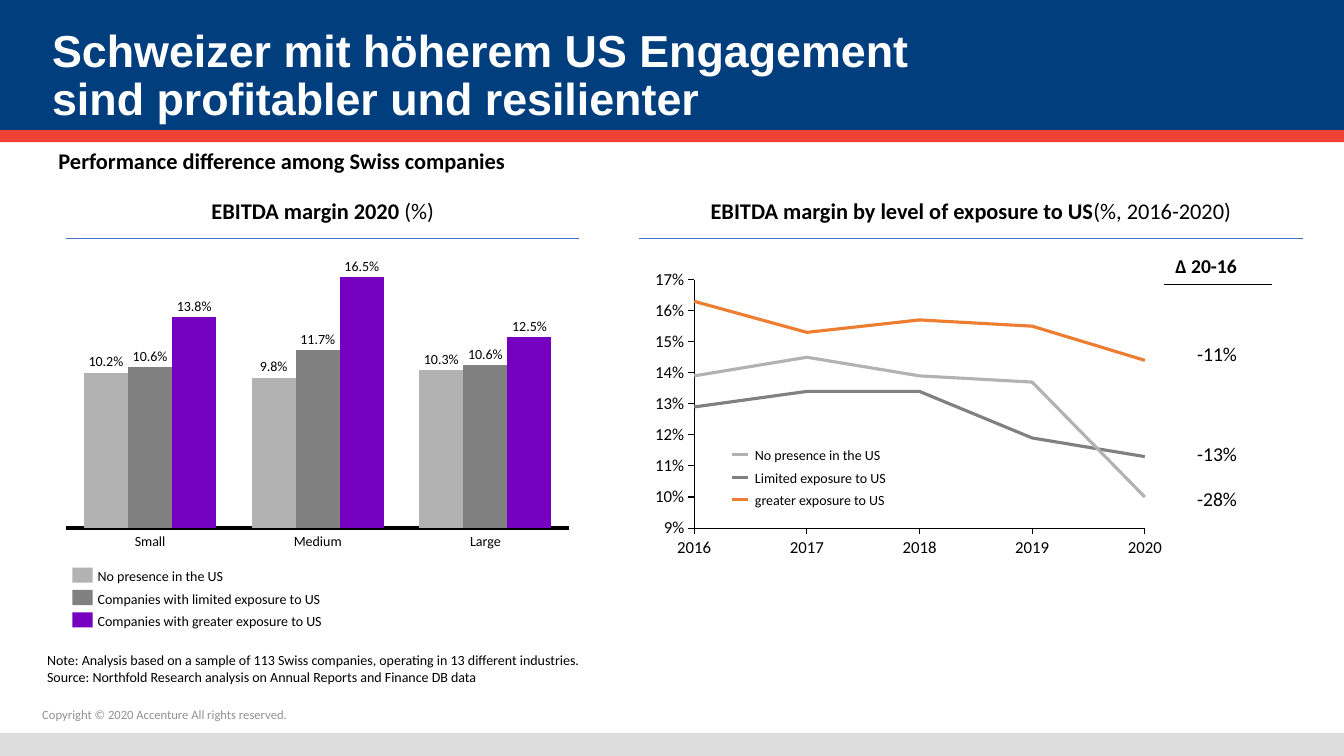
from dataclasses import dataclass

from lxml import etree
from pptx import Presentation
from pptx.chart.chart import Chart
from pptx.chart.data import CategoryChartData, XyChartData
from pptx.dml.color import RGBColor
from pptx.enum.chart import XL_CHART_TYPE, XL_TICK_LABEL_POSITION, XL_TICK_MARK
from pptx.enum.shapes import MSO_CONNECTOR, MSO_SHAPE
from pptx.enum.text import MSO_ANCHOR, MSO_AUTO_SIZE, PP_ALIGN
from pptx.oxml.ns import qn
from pptx.slide import Slide
from pptx.text.text import Font
from pptx.util import Pt

COLUMNS, LINES = XL_CHART_TYPE.COLUMN_CLUSTERED, XL_CHART_TYPE.XY_SCATTER_LINES_NO_MARKERS
TICK_NONE, TICK_OUT = XL_TICK_MARK.NONE, XL_TICK_MARK.OUTSIDE
NO_LABELS = XL_TICK_LABEL_POSITION.NONE
RECT, STRAIGHT = MSO_SHAPE.RECTANGLE, MSO_CONNECTOR.STRAIGHT
TOP, MIDDLE, BOTTOM = MSO_ANCHOR.TOP, MSO_ANCHOR.MIDDLE, MSO_ANCHOR.BOTTOM
LEFT, CENTER = PP_ALIGN.LEFT, PP_ALIGN.CENTER


@dataclass(frozen=True)
class Theme:
    title_font: str = "Arial"
    body_font: str = "Calibri"
    white: str = "FFFFFF"
    black: str = "000000"
    navy: str = "003E7E"
    red: str = "EF4135"
    footer: str = "DDDDDD"
    copyright: str = "919191"
    rule: str = "4472C4"
    none: str = "B2B2B2"
    limited: str = "808080"
    greater_bar: str = "7500C0"
    greater_line: str = "ED7D31"
    title_size: float = 32
    heading_size: float = 16
    delta_size: float = 14
    axis_size: float = 12
    label_size: float = 10
    copyright_size: float = 9


THEME = Theme()


@dataclass(frozen=True)
class Box:
    left: float
    top: float
    width: float
    height: float

    def emu(self) -> tuple[Pt, Pt, Pt, Pt]:
        return Pt(self.left), Pt(self.top), Pt(self.width), Pt(self.height)

    def inner(self, x: float, y: float, w: float, h: float) -> "Box":
        """Area given as fractions of this box."""
        return Box(self.left + x * self.width, self.top + y * self.height,
                   w * self.width, h * self.height)


@dataclass(frozen=True)
class Run:
    text: str
    bold: bool = False


@dataclass(frozen=True)
class Exposure:
    """One company group in either chart."""
    name: str
    color: str
    values: tuple[float, ...]
    labels: tuple[str, ...] = ()


@dataclass(frozen=True)
class Heading:
    box: Box
    measure: str
    unit: str


@dataclass(frozen=True)
class Delta:
    change: str
    top: float


BANDS = [(Box(0, 523.5, 960, 16.5), THEME.footer), (Box(0, 0, 960, 93.5), THEME.navy),
         (Box(0, 93, 960, 8.6), THEME.red)]
HEADINGS = [Heading(Box(47.5, 133.9, 366, 36.4), "EBITDA margin 2020 ", "(%)"),
            Heading(Box(456.5, 133.9, 474, 36.4),
                    "EBITDA margin by level of exposure to US", "(%, 2016-2020)")]
SIZES = ("Small", "Medium", "Large")
YEARS = range(2016, 2021)
BARS = [
    Exposure("No presence in the US", THEME.none, (62, 60, 63), ("10.2%", "9.8%", "10.3%")),
    Exposure("Companies with limited exposure to US", THEME.limited, (64, 71, 65),
             ("10.6%", "11.7%", "10.6%")),
    Exposure("Companies with greater exposure to US", THEME.greater_bar, (84, 100, 76),
             ("13.8%", "16.5%", "12.5%"))]
TRENDS = [
    Exposure("No presence in the US", THEME.none, (13.9, 14.5, 13.9, 13.7, 10)),
    Exposure("Limited exposure to US", THEME.limited, (12.9, 13.4, 13.4, 11.9, 11.3)),
    Exposure("greater exposure to US", THEME.greater_line, (16.3, 15.3, 15.7, 15.5, 14.4))]
DELTAS = [Delta("-11%", 244), Delta("-13%", 315.4), Delta("-28%", 347.8)]
BAR_BOX, BAR_PLOT = Box(41, 191.5, 372.3, 192.3), (0.017, 0.034, 0.965, 0.932)
TREND_BOX, TREND_PLOT = Box(455.8, 190.8, 388.8, 212.4), (0.103, 0.042, 0.828, 0.836)
GAP = 80
LEGEND_PITCH = 16


def assign(target: object, values: dict[str, object]) -> None:
    for name, value in values.items():
        setattr(target, name, value)


def style_font(font: Font, size: float, color: str = THEME.black, bold: bool = False,
               face: str = THEME.body_font) -> None:
    assign(font, {"name": face, "size": Pt(size), "bold": bold})
    font.color.rgb = RGBColor.from_string(color)


def add_text(slide: Slide, box: Box, lines: list[list[Run]], size: float = THEME.label_size,
             color: str = THEME.black, align: PP_ALIGN = LEFT, anchor: MSO_ANCHOR = TOP,
             wrap: bool = True, insets: tuple[float, ...] = (0, 0, 0, 0)) -> None:
    """Each line is a paragraph; insets run left, top, right, bottom."""
    frame = slide.shapes.add_textbox(*box.emu()).text_frame
    left, top, right, bottom = map(Pt, insets)
    assign(frame, {"word_wrap": wrap, "vertical_anchor": anchor, "margin_left": left,
                   "margin_top": top, "margin_right": right, "margin_bottom": bottom})
    for index, line in enumerate(lines):
        paragraph = frame.add_paragraph() if index else frame.paragraphs[0]
        paragraph.alignment = align
        for part in line:
            run = paragraph.add_run()
            run.text = part.text
            style_font(run.font, size, color, part.bold)


def add_block(slide: Slide, box: Box, color: str) -> None:
    block = slide.shapes.add_shape(RECT, *box.emu())
    block.shadow.inherit = False
    block.fill.solid()
    block.fill.fore_color.rgb = RGBColor.from_string(color)
    block.line.fill.background()


def add_rule(slide: Slide, left: float, right: float, y: float, color: str,
             width: float = 0.5) -> None:
    rule = slide.shapes.add_connector(STRAIGHT, Pt(left), Pt(y), Pt(right), Pt(y))
    rule.line.color.rgb = RGBColor.from_string(color)
    rule.line.width = Pt(width)
    etree.SubElement(rule.element.spPr, qn("a:effectLst"))


def prepare_chart(chart: Chart, plot_area: tuple[float, ...]) -> None:
    """Set font, axes without gridlines and the inner plot area."""
    assign(chart, {"has_legend": False, "has_title": False})
    style_font(chart.font, THEME.label_size)
    chart.plots[0].vary_by_categories = False
    for axis in (chart.category_axis, chart.value_axis):
        assign(axis, {"has_major_gridlines": False, "minor_tick_mark": TICK_NONE})
        axis.format.line.color.rgb = RGBColor.from_string(THEME.black)
    area = chart.element.find(".//" + qn("c:plotArea"))
    for old in area.findall(qn("c:layout")):
        area.remove(old)
    layout = etree.Element(qn("c:layout"))
    manual = etree.SubElement(layout, qn("c:manualLayout"))
    settings = {"layoutTarget": "inner", "xMode": "edge", "yMode": "edge",
                **dict(zip("xywh", plot_area))}
    for tag, value in settings.items():
        etree.SubElement(manual, qn(f"c:{tag}"), val=str(value))
    area.insert(0, layout)


def add_bar_chart(slide: Slide) -> None:
    data = CategoryChartData()
    data.categories = SIZES
    for group in BARS:
        data.add_series(group.name, group.values)
    chart = slide.shapes.add_chart(COLUMNS, *BAR_BOX.emu(), data).chart
    prepare_chart(chart, BAR_PLOT)
    assign(chart.plots[0], {"gap_width": GAP, "overlap": 0})
    assign(chart.category_axis, {"tick_label_position": NO_LABELS, "major_tick_mark": TICK_NONE})
    chart.category_axis.format.line.width = Pt(2.25)
    assign(chart.value_axis, {"visible": False, "minimum_scale": 0, "maximum_scale": 100})
    for series, group in zip(chart.plots[0].series, BARS):
        series.format.fill.solid()
        series.format.fill.fore_color.rgb = RGBColor.from_string(group.color)

    plot = BAR_BOX.inner(*BAR_PLOT)
    slot = plot.width / len(SIZES)
    bar = slot / (len(BARS) + GAP / 100)
    for column, size_name in enumerate(SIZES):
        middle = plot.left + (column + 0.5) * slot
        add_text(slide, Box(middle - 20, 380.2, 40, 12.2), [[Run(size_name)]],
                 align=CENTER, wrap=False)
        for place, group in enumerate(BARS):
            center = middle + (place - 1) * bar
            bar_top = plot.top + plot.height * (1 - group.values[column] / 100)
            add_text(slide, Box(center - 15, bar_top - 14.2, 30, 12.2),
                     [[Run(group.labels[column])]], align=CENTER, anchor=BOTTOM, wrap=False)
    for row, group in enumerate(BARS):
        y = 405.4 + row * LEGEND_PITCH
        add_block(slide, Box(51.8, y, 14.4, 10.8), group.color)
        add_text(slide, Box(69.8, y, 192, 12.2), [[Run(group.name)]], anchor=MIDDLE, wrap=False)


def add_trend_chart(slide: Slide) -> None:
    data = XyChartData()
    for group in TRENDS:
        points = data.add_series(group.name)
        for year, margin in zip(YEARS, group.values):
            points.add_data_point(year, margin)
    chart = slide.shapes.add_chart(LINES, *TREND_BOX.emu(), data).chart
    prepare_chart(chart, TREND_PLOT)
    for axis, low, high, pattern in ((chart.category_axis, YEARS[0], YEARS[-1], '0;"-"0'),
                                     (chart.value_axis, 9, 17, '#,##0"%";"-"#,##0"%"')):
        assign(axis, {"minimum_scale": low, "maximum_scale": high, "major_unit": 1,
                      "major_tick_mark": TICK_OUT})
        assign(axis.tick_labels, {"number_format": pattern, "number_format_is_linked": False})
        style_font(axis.tick_labels.font, THEME.axis_size)
        axis.format.line.width = Pt(0.75)
    for row, (series, group) in enumerate(zip(chart.plots[0].series, TRENDS)):
        series.format.line.color.rgb = RGBColor.from_string(group.color)
        series.format.line.width = Pt(2.25)
        y = 324.9 + row * LEGEND_PITCH
        add_rule(slide, 522.7, 534.2, y, group.color, 2.25)
        add_text(slide, Box(539.3, y - 5.8, 111, 12.2), [[Run(group.name)]],
                 anchor=MIDDLE, wrap=False)


def add_title(slide: Slide) -> None:
    title = slide.shapes.title
    slide.shapes.element.append(title.element)  # in front of the bands
    assign(title, dict(zip(("left", "top", "width", "height"), Box(30, 30, 900, 50.4).emu())))
    frame = title.text_frame
    frame.text = "Schweizer mit höherem US Engagement\vsind profitabler und resilienter"
    assign(frame, {"vertical_anchor": MIDDLE, "auto_size": MSO_AUTO_SIZE.NONE, "word_wrap": True})
    assign(frame.paragraphs[0], {"alignment": LEFT, "line_spacing": 0.9})
    for run in frame.paragraphs[0].runs:
        style_font(run.font, THEME.title_size, THEME.white, True, THEME.title_font)


def main() -> None:
    deck = Presentation()
    assign(deck, {"slide_width": Pt(960), "slide_height": Pt(540)})
    slide = deck.slides.add_slide(deck.slide_layouts[5])
    for box, color in BANDS:
        add_block(slide, box, color)
    add_title(slide)
    below = (0, 0, 0, 3.6)
    add_text(slide, Box(41.8, 105.1, 476, 36.7),
             [[Run("Performance difference among Swiss companies", True)]],
             THEME.heading_size, insets=below)
    for heading in HEADINGS:
        box = heading.box
        add_text(slide, box, [[Run(heading.measure, True), Run(heading.unit)]],
                 THEME.heading_size, align=CENTER, anchor=MIDDLE, insets=below)
        add_rule(slide, box.left, box.left + box.width, box.top + box.height, THEME.rule)
    add_bar_chart(slide)
    add_trend_chart(slide)
    add_text(slide, Box(839.5, 181.4, 61.2, 28.8), [[Run("Δ 20-16", True)]],
             THEME.delta_size, insets=below)
    add_rule(slide, 831.6, 908.6, 203, THEME.black)
    for delta in DELTAS:
        add_text(slide, Box(845.3, delta.top, 48.2, 28.8), [[Run(delta.change)]],
                 THEME.delta_size, align=CENTER, insets=below)
    add_text(slide, Box(26.6, 462.2, 904.3, 31.7), [
        [Run("Note: Analysis based on a sample of 113 Swiss companies, "
             "operating in 13 different industries.")],
        [Run("Source: Northfold Research analysis on Annual Reports and Finance DB data")],
    ], insets=(7.2, 3.6, 7.2, 3.6))
    add_text(slide, Box(30.2, 504.7, 324, 10.8),
             [[Run("Copyright © 2020 Accenture All rights reserved.")]],
             THEME.copyright_size, THEME.copyright)
    deck.save("out.pptx")


if __name__ == "__main__":
    main()
